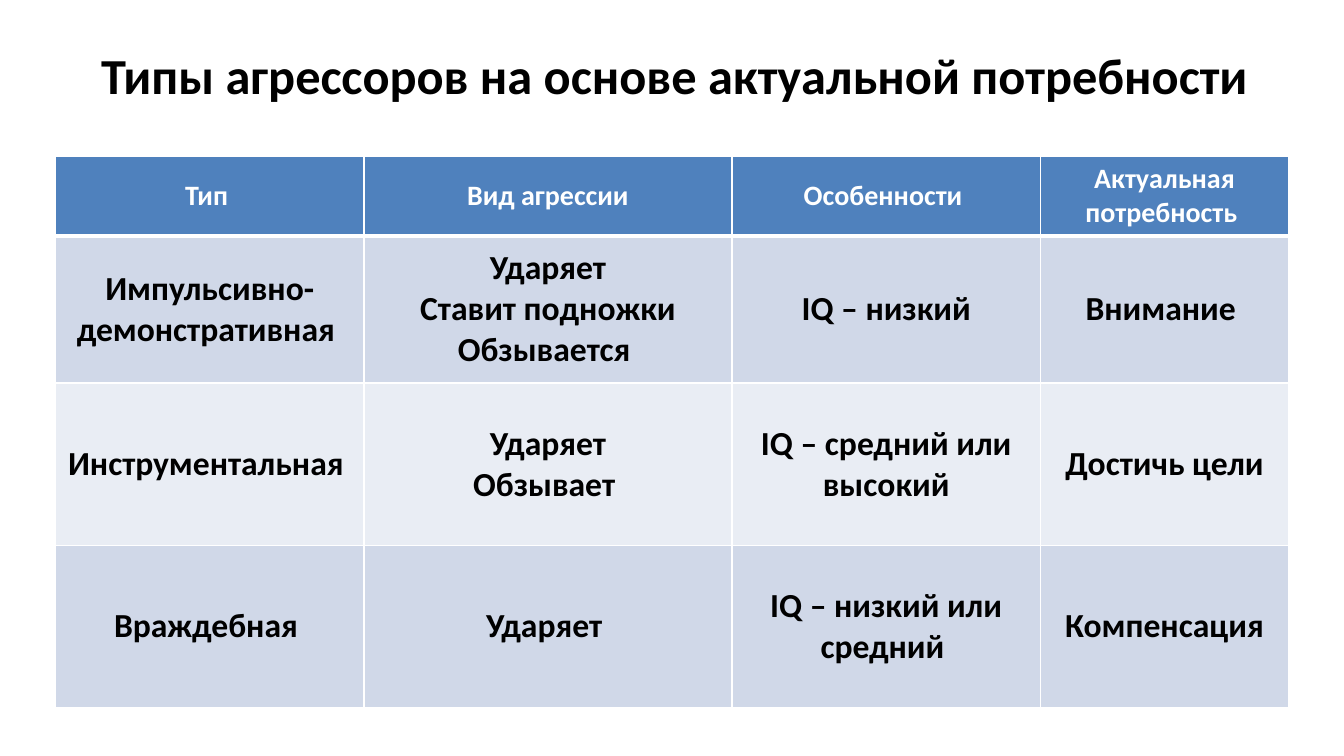
from dataclasses import dataclass

from lxml import etree
from pptx import Presentation
from pptx.dml.color import RGBColor
from pptx.enum.text import MSO_ANCHOR, MSO_AUTO_SIZE, PP_ALIGN
from pptx.oxml.ns import qn
from pptx.util import Inches, Pt

MIDDLE = MSO_ANCHOR.MIDDLE
CENTER = PP_ALIGN.CENTER
NO_FIT = MSO_AUTO_SIZE.NONE
TITLE_ONLY = 5


@dataclass(frozen=True)
class Theme:
    font: str = "Calibri"
    ink: str = "000000"
    paper: str = "FFFFFF"
    header: str = "4F81BD"
    bands: tuple = ("D0D8E8", "E9EDF4")
    title_size: int = 36
    header_size: int = 20
    body_size: int = 24
    rule: int = 1
    header_rule: int = 3


THEME = Theme()
PAGE_SIZE = (13.33, 7.5)
TITLE_BOX = (0.37, 0.47, 12.76, 0.54)
TABLE_ORIGIN = (0.55, 1.55)
COLUMNS = (3.06, 3.65, 3.06, 2.46)
ROWS = (0.79, 1.46, 1.61, 1.61)

TITLE = "Типы агрессоров на основе актуальной потребности "
AGGRESSORS = (
    ("Тип ", "Вид агрессии", "Особенности ", "Актуальная потребность "),
    ("Импульсивно-демонстративная ", "Ударяет\nСтавит подножки\nОбзывается ",
     "IQ – низкий", "Внимание "),
    ("Инструментальная ", "Ударяет\nОбзывает ",
     "IQ – средний или высокий", "Достичь цели"),
    ("Враждебная ", "Ударяет ", "IQ – низкий или средний ", "Компенсация"),
)


def write_text(frame, text, size, color):
    frame.text = text
    frame.word_wrap = True
    for para in frame.paragraphs:
        para.alignment = CENTER
        for span in para.runs:
            formats = {"name": THEME.font, "size": Pt(size), "bold": True}
            for name, value in formats.items():
                setattr(span.font, name, value)
            span.font.color.rgb = RGBColor.from_string(color)


def add_title(page, text):
    box = page.shapes.title
    for name, value in zip(("left", "top", "width", "height"), TITLE_BOX):
        setattr(box, name, Inches(value))
    write_text(box.text_frame, text, THEME.title_size, THEME.ink)
    box.text_frame.vertical_anchor = MIDDLE
    box.text_frame.auto_size = NO_FIT


def set_borders(cell, widths):
    properties = cell._tc.get_or_add_tcPr()
    for side, width in zip(("L", "R", "T", "B"), widths):
        line = etree.SubElement(properties, qn(f"a:ln{side}"), w=str(Pt(width)))
        fill = etree.SubElement(line, qn("a:solidFill"))
        etree.SubElement(fill, qn("a:srgbClr"), val=THEME.paper)


def format_cell(cell, text, row):
    is_header = row == 0
    size = THEME.header_size if is_header else THEME.body_size
    write_text(cell.text_frame, text, size, THEME.paper if is_header else THEME.ink)
    cell.vertical_anchor = MIDDLE
    top = THEME.header_rule if row == 1 else THEME.rule
    bottom = THEME.header_rule if is_header else THEME.rule
    set_borders(cell, (THEME.rule, THEME.rule, top, bottom))
    color = THEME.header if is_header else THEME.bands[(row - 1) % 2]
    cell.fill.solid()
    cell.fill.fore_color.rgb = RGBColor.from_string(color)


def add_grid(page, content):
    bounds = (*TABLE_ORIGIN, sum(COLUMNS), sum(ROWS))
    table = page.shapes.add_table(
        len(ROWS), len(COLUMNS), *map(Inches, bounds)).table
    for column, width in zip(table.columns, COLUMNS):
        column.width = Inches(width)
    for row, height in zip(table.rows, ROWS):
        row.height = Inches(height)
    for row, texts in enumerate(content):
        for column, text in enumerate(texts):
            format_cell(table.cell(row, column), text, row)


def main():
    deck = Presentation()
    deck.slide_width, deck.slide_height = map(Inches, PAGE_SIZE)
    page = deck.slides.add_slide(deck.slide_layouts[TITLE_ONLY])
    add_title(page, TITLE)
    add_grid(page, AGGRESSORS)
    deck.save("out.pptx")


if __name__ == "__main__":
    main()
